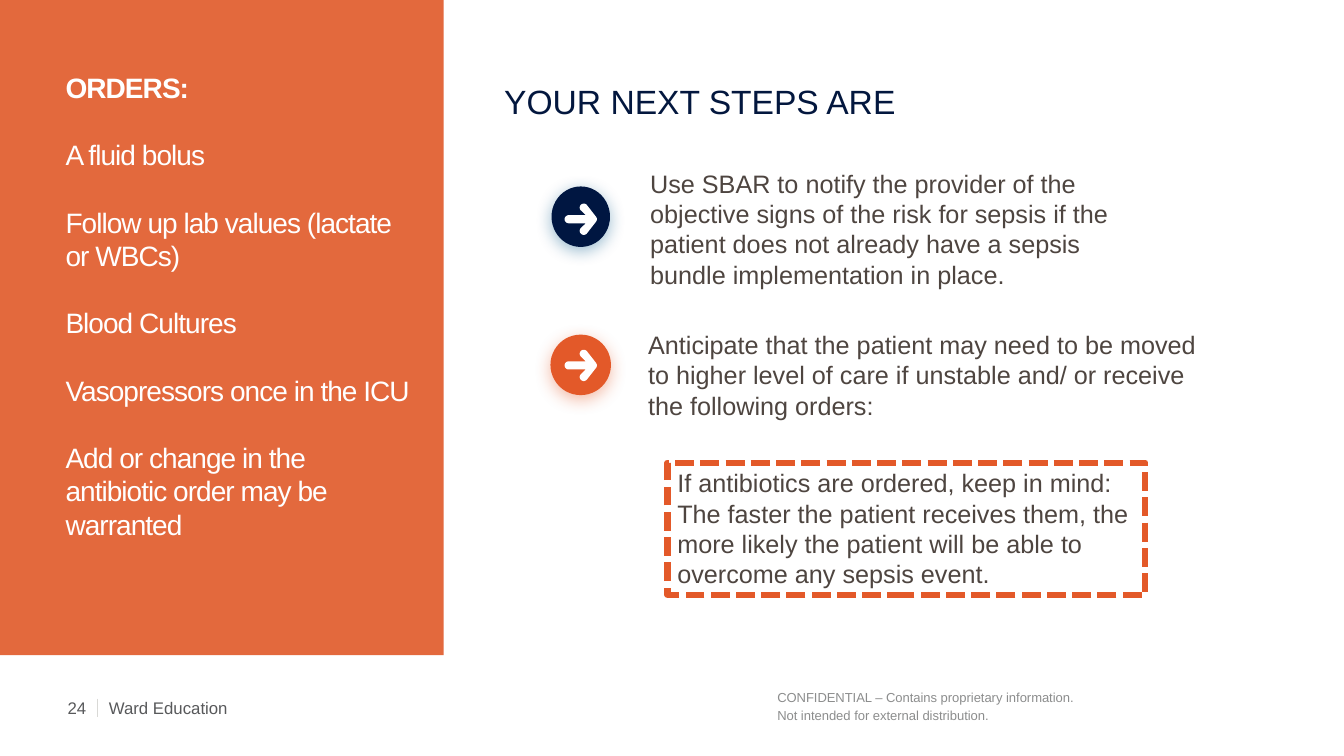
"""Build the sepsis next-steps slide with its orders panel."""
from dataclasses import dataclass
from math import cos, radians, sin

from lxml.etree import SubElement
from pptx import Presentation
from pptx.dml.color import RGBColor
from pptx.enum.dml import MSO_LINE
from pptx.enum.shapes import MSO_CONNECTOR, MSO_SHAPE
from pptx.enum.text import MSO_ANCHOR, MSO_AUTO_SIZE, PP_ALIGN
from pptx.oxml.ns import qn
from pptx.util import Inches, Pt


@dataclass(frozen=True)
class Theme:
    font: str = "Arial"
    panel: str = "E05929"
    orange: str = "E35929"
    navy: str = "001641"
    navy_glow: str = "005689"
    heading: str = "03173E"
    body: str = "4E4540"
    footer: str = "58595B"
    notice: str = "8C8D8D"
    rule: str = "D9D9D6"
    white: str = "FFFFFF"
    heading_size: float = 24
    order_size: float = 20
    body_size: float = 18
    footer_size: float = 12
    notice_size: float = 9.3


T = Theme()
ORDERS = [
    "ORDERS:",
    "A fluid bolus",
    "Follow up lab values (lactate or WBCs)",
    "Blood Cultures",
    "Vasopressors once in the ICU",
    "Add or change in the antibiotic order may be warranted",
]
HEADING = "YOUR NEXT STEPS ARE"
STEPS = [
    ("Use SBAR to notify the provider of the objective signs of the risk for sepsis "
     "if the patient does not already have a sepsis bundle implementation in place.",
     (6.35, 1.62, 4.96, 1.62), (5.47, 1.85, 0.58, 0.6), (5.6, 2.02), T.navy, T.navy_glow),
    ("Anticipate that the patient may need to be moved to higher level of care if "
     "unstable and/ or receive the following orders:",
     (6.33, 3.22, 5.7, 1.31), (5.46, 3.32, 0.6, 0.6), (5.6, 3.47), T.orange, T.orange),
]
REMINDER = ("If antibiotics are ordered, keep in mind: The faster the patient receives them, "
            "the more likely the patient will be able to overcome any sepsis event.")
NOTICE = ["CONFIDENTIAL – Contains proprietary information.",
          "Not intended for external distribution."]
FOOTERS = [("24", (0.67, 6.89, 0.36, 0.27)), ("Ward Education", (1.08, 6.89, 4.94, 0.27))]
ARROW_RADIUS = 0.04
ARROW_ARCS = [
    ((0.19, 0.04), 143, 323),
    ((0.28, 0.155), -37, 37),
    ((0.19, 0.27), 37, 217),
    ((0.21, 0.195), None, None),
    ((0.04, 0.155), 90, 270),
    ((0.21, 0.115), None, None),
]


def rgb(color):
    """Turn a hex string into a colour."""
    return RGBColor.from_string(color)


def inches(box):
    """Turn a tuple of inches into lengths."""
    return [Inches(v) for v in box]


def paint(sp, color):
    """Give a shape a flat fill with no line or shadow."""
    sp.shadow.inherit = False
    sp.fill.solid()
    sp.fill.fore_color.rgb = rgb(color)
    sp.line.fill.background()


def write(sp, lines, size, color, insets=(0.1, 0.05, 0.1, 0.05), anchor=MSO_ANCHOR.TOP,
          wrap=True, spacing=1.0, after=0):
    """Write lines as left-aligned paragraphs and return them."""
    tf = sp.text_frame
    tf.auto_size = MSO_AUTO_SIZE.NONE
    tf.word_wrap = wrap
    tf.vertical_anchor = anchor
    tf.margin_left, tf.margin_top, tf.margin_right, tf.margin_bottom = inches(insets)
    for i, line in enumerate(lines):
        p = tf.paragraphs[0] if i == 0 else tf.add_paragraph()
        p.alignment = PP_ALIGN.LEFT
        p.line_spacing = spacing
        p.space_before, p.space_after = Pt(0), Pt(after)
        r = p.add_run()
        r.text = line
        r.font.name, r.font.size = T.font, Pt(size)
        r.font.color.rgb = rgb(color)
    return tf.paragraphs


def place(sp, box):
    """Move a placeholder to a box."""
    sp.left, sp.top, sp.width, sp.height = inches(box)


def add_panel(s):
    """Put the translucent orders panel behind everything."""
    panel = s.shapes.add_shape(MSO_SHAPE.RECTANGLE, *inches((0, 0, 4.4, 6.5)))
    paint(panel, T.panel)
    clr = panel._element.spPr.find(qn("a:solidFill"))[0]
    SubElement(clr, qn("a:alpha")).set("val", "90000")
    s.shapes._spTree.insert(2, panel._element)


def add_orders(s):
    """Fill the title with the list of orders."""
    place(s.shapes.title, (0.65, 0.7, 3.42, 5.7))
    paragraphs = write(s.shapes.title, ORDERS, T.order_size, T.white, (0, 0, 0, 0), after=24)
    for i, p in enumerate(paragraphs):
        r = p.runs[0]
        r.font.bold = i == 0
        r._r.get_or_add_rPr().set("spc", "-70")


def add_heading(s):
    """Fill the body placeholder with the heading, without a bullet."""
    sp = s.placeholders[1]
    place(sp, (5, 0.69, 5.03, 0.56))
    p = write(sp, [HEADING], T.heading_size, T.heading, (0, 0.05, 0.1, 0.05),
              MSO_ANCHOR.BOTTOM, spacing=1.1, after=8)[0]
    pPr = p._p.get_or_add_pPr()
    pPr.set("marL", "0")
    pPr.set("indent", "0")
    SubElement(pPr, qn("a:buNone"))


def add_glow(sp, color):
    """Give a shape a soft coloured shadow below it."""
    effects = sp._element.spPr.find(qn("a:effectLst"))
    shadow = SubElement(effects, qn("a:outerShdw"), blurRad=str(Pt(12)), dist=str(Pt(3)),
                        dir="5400000", algn="t", rotWithShape="0")
    clr = SubElement(shadow, qn("a:srgbClr"), val=color)
    SubElement(clr, qn("a:alpha"), val="40000")


def arrow_points(left, top):
    """Trace the round-ended arrow in thousandths of an inch."""
    points = []
    for (x, y), start, end in ARROW_ARCS:
        if start is None:
            points.append((x, y))
            continue
        for k in range(13):
            a = radians(start + (end - start) * k / 12)
            points.append((x + ARROW_RADIUS * cos(a), y + ARROW_RADIUS * sin(a)))
    return [(round(1000 * (left + x)), round(1000 * (top + y))) for x, y in points]


def add_step(s, text, box, disc_box, arrow_at, color, glow):
    """Add one step with its arrow badge."""
    badge = s.shapes.add_group_shape()
    disc = badge.shapes.add_shape(MSO_SHAPE.OVAL, *inches(disc_box))
    paint(disc, color)
    add_glow(disc, glow)
    first, *rest = arrow_points(*arrow_at)
    outline = badge.shapes.build_freeform(*first, scale=Inches(1) / 1000)
    outline.add_line_segments(rest, close=True)
    paint(outline.convert_to_shape(), T.white)
    write(s.shapes.add_textbox(*inches(box)), [text], T.body_size, T.body)


def add_reminder(s):
    """Add the dashed reminder box."""
    sp = s.shapes.add_shape(MSO_SHAPE.RECTANGLE, *inches((6.62, 4.59, 4.74, 1.31)))
    sp.shadow.inherit = False
    sp.fill.background()
    sp.line.color.rgb = rgb(T.orange)
    sp.line.width = Pt(4.5)
    sp.line.dash_style = MSO_LINE.SQUARE_DOT
    write(sp, [REMINDER], T.body_size, T.body)


def add_footer(s):
    """Add the page number, course name, divider and notice."""
    for text, box in FOOTERS:
        write(s.shapes.add_textbox(*inches(box)), [text], T.footer_size, T.footer,
              (0, 0.05, 0, 0.05), MSO_ANCHOR.MIDDLE, wrap=False)
    rule = s.shapes.add_connector(MSO_CONNECTOR.STRAIGHT, *inches((0.97, 6.93, 0.97, 7.11)))
    rule.line.color.rgb = rgb(T.rule)
    rule.line.width = Pt(0.75)
    SubElement(rule._element.spPr, qn("a:effectLst"))
    write(s.shapes.add_textbox(*inches((7.71, 6.83, 3.43, 0.36))), NOTICE,
          T.notice_size, T.notice, (0, 0, 0, 0), spacing=1.1)


def main():
    """Assemble and save the slide."""
    prs = Presentation()
    prs.slide_width, prs.slide_height = Inches(13.33), Inches(7.5)
    s = prs.slides.add_slide(prs.slide_layouts[1])
    add_panel(s)
    add_orders(s)
    add_heading(s)
    for step in STEPS:
        add_step(s, *step)
    add_reminder(s)
    add_footer(s)
    prs.save("out.pptx")


if __name__ == "__main__":
    main()
